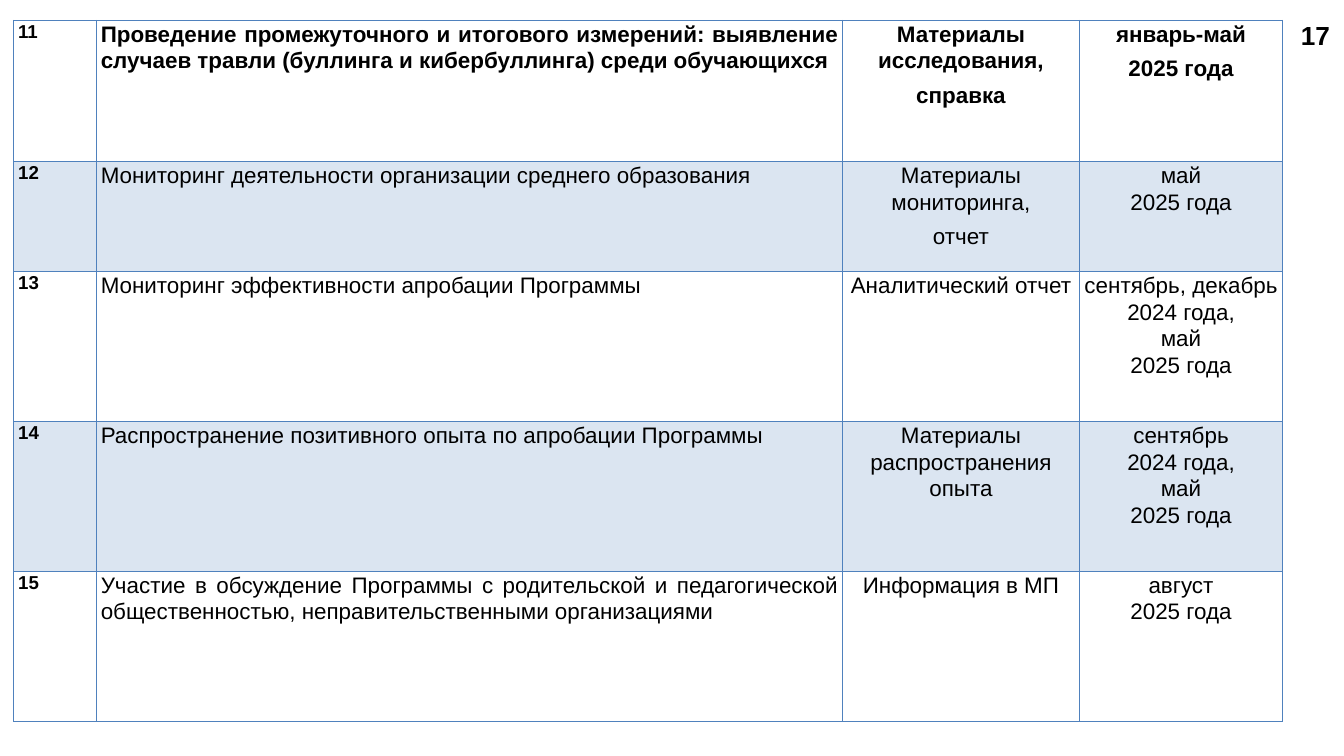
from lxml import etree
from pptx import Presentation
from pptx.dml.color import RGBColor
from pptx.enum.text import PP_ALIGN as Align
from pptx.oxml.ns import qn
from pptx.util import Inches, Pt

COLORS = {"text": "000000", "line": "4F81BD", "band": "4F81BD"}
COLUMN_WIDTHS = [1.23, 11.11, 3.52, 3.03]
ROW_HEIGHTS = [2.1, 1.64, 2.23, 2.23, 2.23]

# Number, activity, result and dates; each list item is a paragraph
ACTIVITIES = [
    ("11", "Проведение промежуточного и итогового измерений: выявление "
           "случаев травли (буллинга и кибербуллинга) среди обучающихся",
     ["Материалы исследования,", "справка"],
     ["январь-май", "2025 года"]),
    ("12", "Мониторинг деятельности организации среднего образования",
     ["Материалы мониторинга,", "отчет"],
     ["май", "2025 года"]),
    ("13", "Мониторинг эффективности апробации Программы",
     ["Аналитический отчет"],
     ["сентябрь, декабрь", "2024 года,", "май", "2025 года"]),
    ("14", "Распространение позитивного опыта по апробации Программы",
     ["Материалы распространения опыта"],
     ["сентябрь", "2024 года,", "май", "2025 года"]),
    ("15", "Участие в обсуждение Программы с родительской и педагогической "
           "общественностью, неправительственными организациями",
     ["Информация в МП"],
     ["август", "2025 года"]),
]


class SlideBuilder:
    font_name = "Arial"

    def __init__(self, slide):
        self.slide = slide

    def run(self, paragraph, text, size, bold):
        run = paragraph.add_run()
        run.text = text
        run.font.name = self.font_name
        run.font.size = Pt(size)
        run.font.bold = bold
        run.font.color.rgb = RGBColor.from_string(COLORS["text"])

    def text(self, left, top, width, height, content, size, bold=False):
        frame = self.slide.shapes.add_textbox(
            Inches(left), Inches(top), Inches(width), Inches(height)).text_frame
        frame.word_wrap = True
        self.run(frame.paragraphs[0], content, size, bold)

    def table(self, left, top, widths, heights):
        table = self.slide.shapes.add_table(
            len(heights), len(widths), Inches(left), Inches(top),
            Inches(sum(widths)), Inches(sum(heights))).table
        table.first_row = table.horz_banding = False
        for column, width in zip(table.columns, widths):
            column.width = Inches(width)
        for row, height in zip(table.rows, heights):
            row.height = Inches(height)
        return table

    def cell(self, cell, lines, size, bold, align, space_after, banded):
        cell.margin_left = cell.margin_right = Inches(0.07)
        cell.margin_top = cell.margin_bottom = 0
        frame = cell.text_frame
        for index, line in enumerate(lines):
            paragraph = frame.add_paragraph() if index else frame.paragraphs[0]
            paragraph.alignment = align
            paragraph.line_spacing = 1.07
            paragraph.space_after = Pt(space_after)
            self.run(paragraph, line, size, bold)
        self.borders(cell)
        self.fill(cell, banded)

    def borders(self, cell):
        properties = cell._tc.get_or_add_tcPr()
        for side in ("a:lnL", "a:lnR", "a:lnT", "a:lnB"):
            line = etree.SubElement(properties, qn(side), w=str(Pt(1)))
            solid = etree.SubElement(line, qn("a:solidFill"))
            etree.SubElement(solid, qn("a:srgbClr"), val=COLORS["line"])

    def fill(self, cell, banded):
        if not banded:
            cell.fill.background()
            return
        cell.fill.solid()
        cell.fill.fore_color.rgb = RGBColor.from_string(COLORS["band"])
        color = cell._tc.tcPr.find(qn("a:solidFill")).find(qn("a:srgbClr"))
        etree.SubElement(color, qn("a:alpha"), val="20000")


def main():
    deck = Presentation()
    deck.slide_width, deck.slide_height = Inches(20), Inches(11.25)
    builder = SlideBuilder(deck.slides.add_slide(deck.slide_layouts[6]))

    # Plan of activities: first row bold, every second row tinted
    plan = builder.table(0.2, 0.3, COLUMN_WIDTHS, ROW_HEIGHTS)
    for index, (number, activity, results, dates) in enumerate(ACTIVITIES):
        bold = index == 0
        date_gap = 8 if bold else 0
        columns = [
            ([number], 20, True, Align.JUSTIFY, 8),
            ([activity], 24, bold, Align.JUSTIFY, 8),
            (results, 24, bold, Align.CENTER, 8),
            (dates, 24, bold, Align.CENTER, date_gap),
        ]
        for position, style in enumerate(columns):
            builder.cell(plan.cell(index, position), *style, banded=index % 2 == 1)

    # Page number
    builder.text(19.26, 0.24, 0.7, 0.57, "17", 28, bold=True)

    deck.save("out.pptx")


if __name__ == "__main__":
    main()
